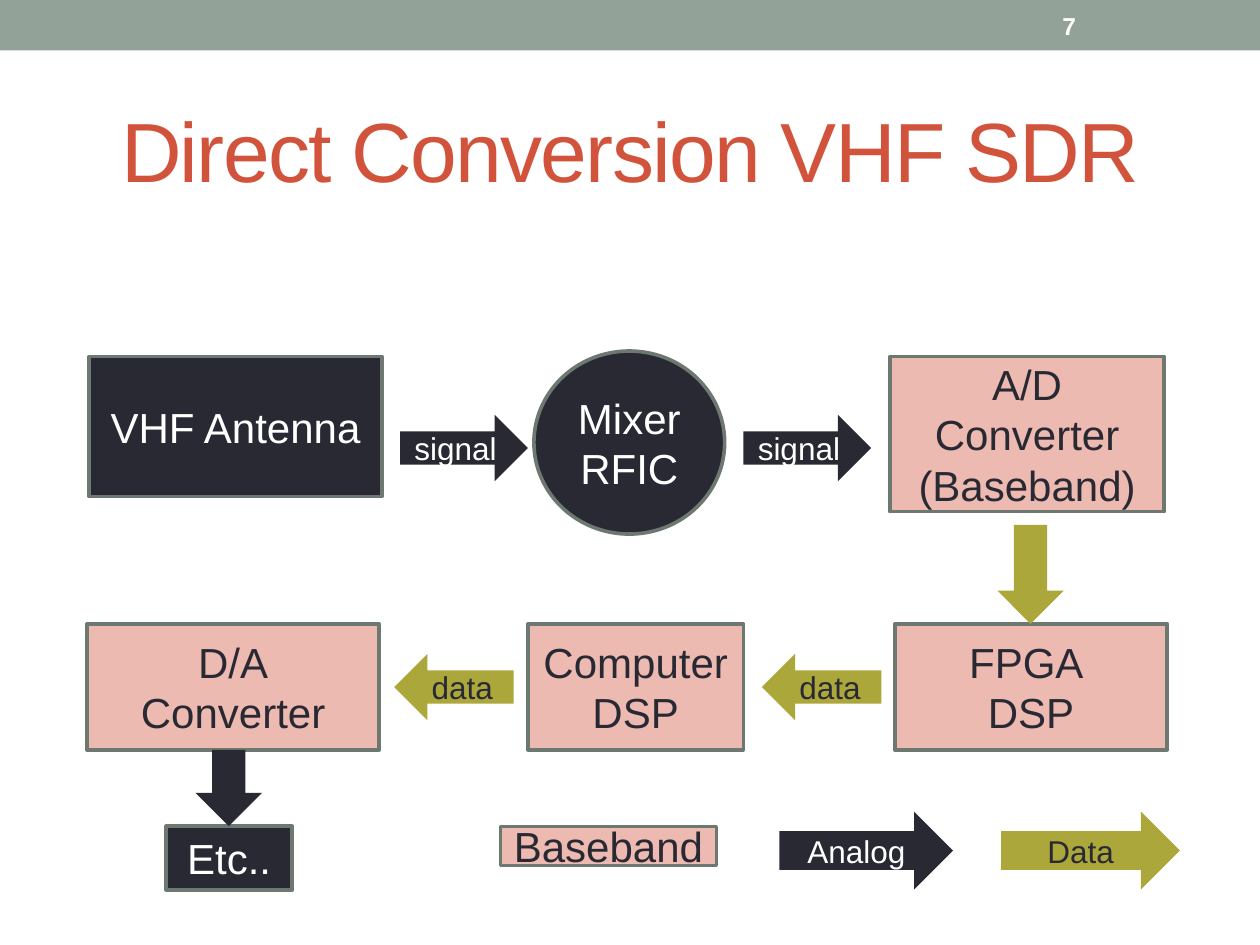
import pptx
from pptx.dml.color import RGBColor
from pptx.enum.shapes import MSO_SHAPE
from pptx.enum.text import MSO_ANCHOR, MSO_AUTO_SIZE, PP_ALIGN
from pptx.util import Pt

FONT = "Arial"
WHITE = RGBColor(0xFF, 0xFF, 0xFF)
DARK = RGBColor(0x29, 0x29, 0x34)
PINK = RGBColor(0xED, 0xBA, 0xB1)
OLIVE = RGBColor(0xAC, 0xA7, 0x3B)
SAGE = RGBColor(0x93, 0xA2, 0x99)
OUTLINE = RGBColor(0x6D, 0x78, 0x71)
RED = RGBColor(0xD2, 0x53, 0x3C)

SLIDE_WIDTH, SLIDE_HEIGHT = 720, 540
TITLE = "Direct Conversion VHF SDR"
PAGE_NUMBER = "7"

RECT, CIRCLE = MSO_SHAPE.RECTANGLE, MSO_SHAPE.OVAL
RIGHT, LEFT, DOWN = MSO_SHAPE.RIGHT_ARROW, MSO_SHAPE.LEFT_ARROW, MSO_SHAPE.DOWN_ARROW

TOP_ROW, LOWER_ROW, LEGEND_ROW = 203.8, 356.5, 472.2
STAGE_HEIGHT = 72

# text, shape, fill, left, top, width, height
STAGES = [
    ("VHF Antenna", RECT, DARK, 51, TOP_ROW, 167.3, 79.9),
    ("Mixer RFIC", CIRCLE, DARK, 305.1, 200.6, 109, 104.6),
    ("A/D Converter\n(Baseband)", RECT, PINK, 508.5, TOP_ROW, 156.8, 88.6),
    ("FPGA \nDSP", RECT, PINK, 511.3, LOWER_ROW, 155.7, STAGE_HEIGHT),
    ("Computer \nDSP", RECT, PINK, 301.7, LOWER_ROW, 123.1, STAGE_HEIGHT),
    ("D/A\nConverter", RECT, PINK, 49.7, LOWER_ROW, 167, STAGE_HEIGHT),
    ("Etc..", RECT, DARK, 95, LEGEND_ROW, 72, 36.4),
    ("Baseband", RECT, PINK, 286, LEGEND_ROW, 123.4, 22.3),
]

ARROW = 38  # breadth of every flow arrow
SIGNAL_TOP, DATA_TOP, KEY_TOP = 237, 373.6, 463.8
ARROWS = [
    ("signal", RIGHT, DARK, 228.6, SIGNAL_TOP, 73, ARROW),
    ("signal", RIGHT, DARK, 424.8, SIGNAL_TOP, 73, ARROW),
    ("", DOWN, OLIVE, 569.9, 300, ARROW, 56.5),
    ("data", LEFT, OLIVE, 435.4, DATA_TOP, 68.2, ARROW),
    ("data", LEFT, OLIVE, 225.3, DATA_TOP, 68.2, ARROW),
    ("", DOWN, DARK, 111.7, 428.5, ARROW, 43.5),
    ("Analog", RIGHT, DARK, 445.4, KEY_TOP, 99.2, 44.5),
    ("Data", RIGHT, OLIVE, 572, KEY_TOP, 102.2, 44.5),
]


def write(shape, text, size, color, align=PP_ALIGN.CENTER, bold=False):
    frame = shape.text_frame
    frame.text = text
    frame.word_wrap = True
    frame.auto_size = MSO_AUTO_SIZE.NONE
    frame.vertical_anchor = MSO_ANCHOR.MIDDLE
    for para in frame.paragraphs:
        para.alignment = align
        for span in para.runs:
            span.font.name = FONT
            span.font.size = Pt(size)
            span.font.bold = bold
            span.font.color.rgb = color


def add_block(page, kind, fill, left, top, width, height, outlined=False):
    shape = page.shapes.add_shape(kind, Pt(left), Pt(top), Pt(width), Pt(height))
    shape.shadow.inherit = False
    shape.fill.solid()
    shape.fill.fore_color.rgb = fill
    if outlined:
        shape.line.color.rgb = OUTLINE
        shape.line.width = Pt(2.08)
    else:
        shape.line.fill.background()
    return shape


def add_blocks(page, blocks, size, outlined):
    for text, kind, fill, *place in blocks:
        shape = add_block(page, kind, fill, *place, outlined=outlined)
        if text:
            write(shape, text, size, WHITE if fill == DARK else DARK)


def add_header(page):
    add_block(page, RECT, SAGE, 0, 0, SLIDE_WIDTH, 28.8)
    number = page.shapes.add_textbox(Pt(600), Pt(1.5), Pt(84), Pt(26))
    write(number, PAGE_NUMBER, 14, WHITE, PP_ALIGN.LEFT, bold=True)

    title = page.shapes.title
    title.left, title.top, title.width, title.height = Pt(36), Pt(42), Pt(648), Pt(86.4)
    write(title, TITLE, 48, RED)
    # Letter spacing, in hundredths of a point
    title.text_frame.paragraphs[0].runs[0].font._element.set("spc", "-100")


def main():
    deck = pptx.Presentation()
    deck.slide_width, deck.slide_height = Pt(SLIDE_WIDTH), Pt(SLIDE_HEIGHT)
    page = deck.slides.add_slide(deck.slide_layouts[5])
    add_header(page)
    add_blocks(page, STAGES, 24, outlined=True)
    add_blocks(page, ARROWS, 18, outlined=False)
    deck.save("out.pptx")


if __name__ == "__main__":
    main()
